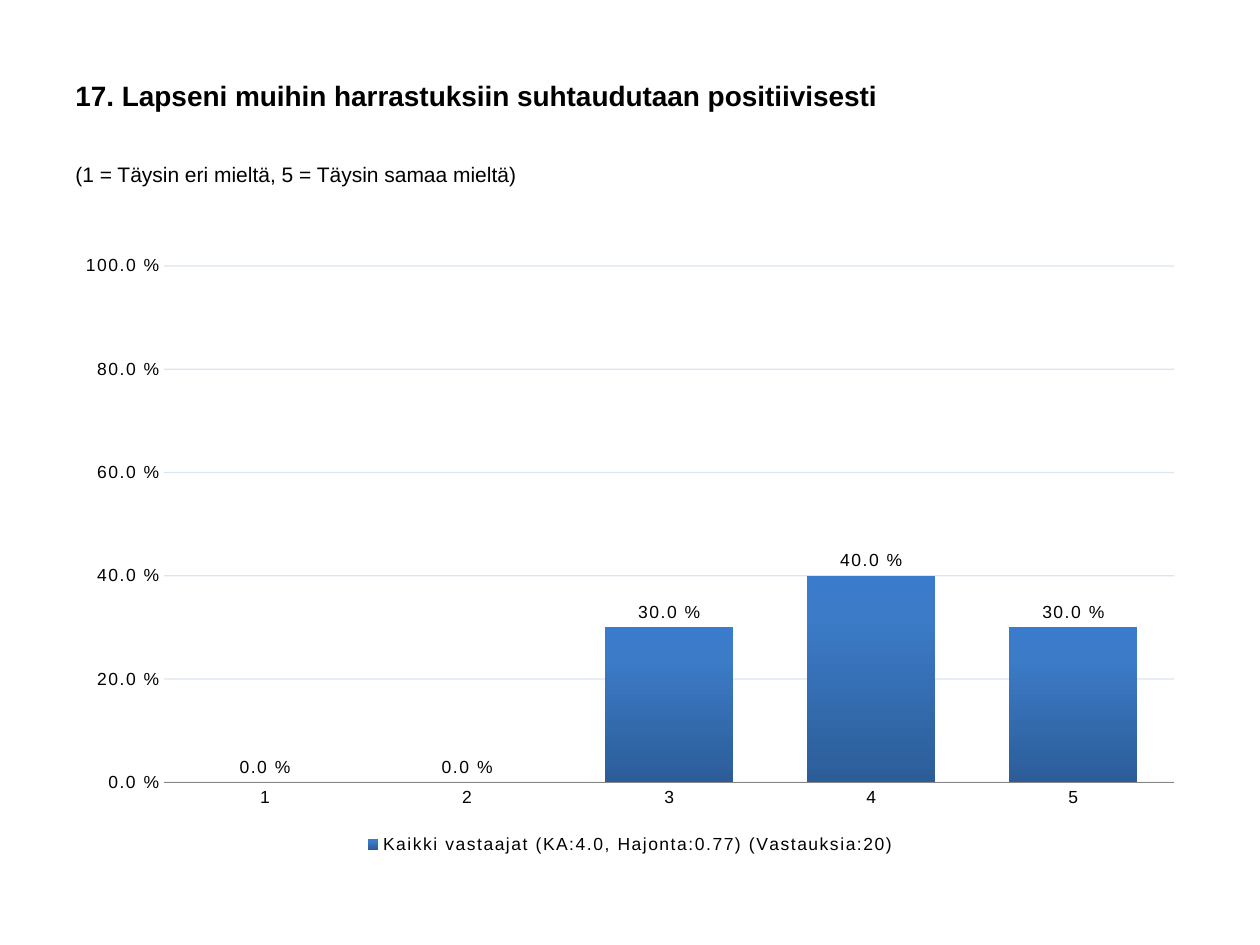
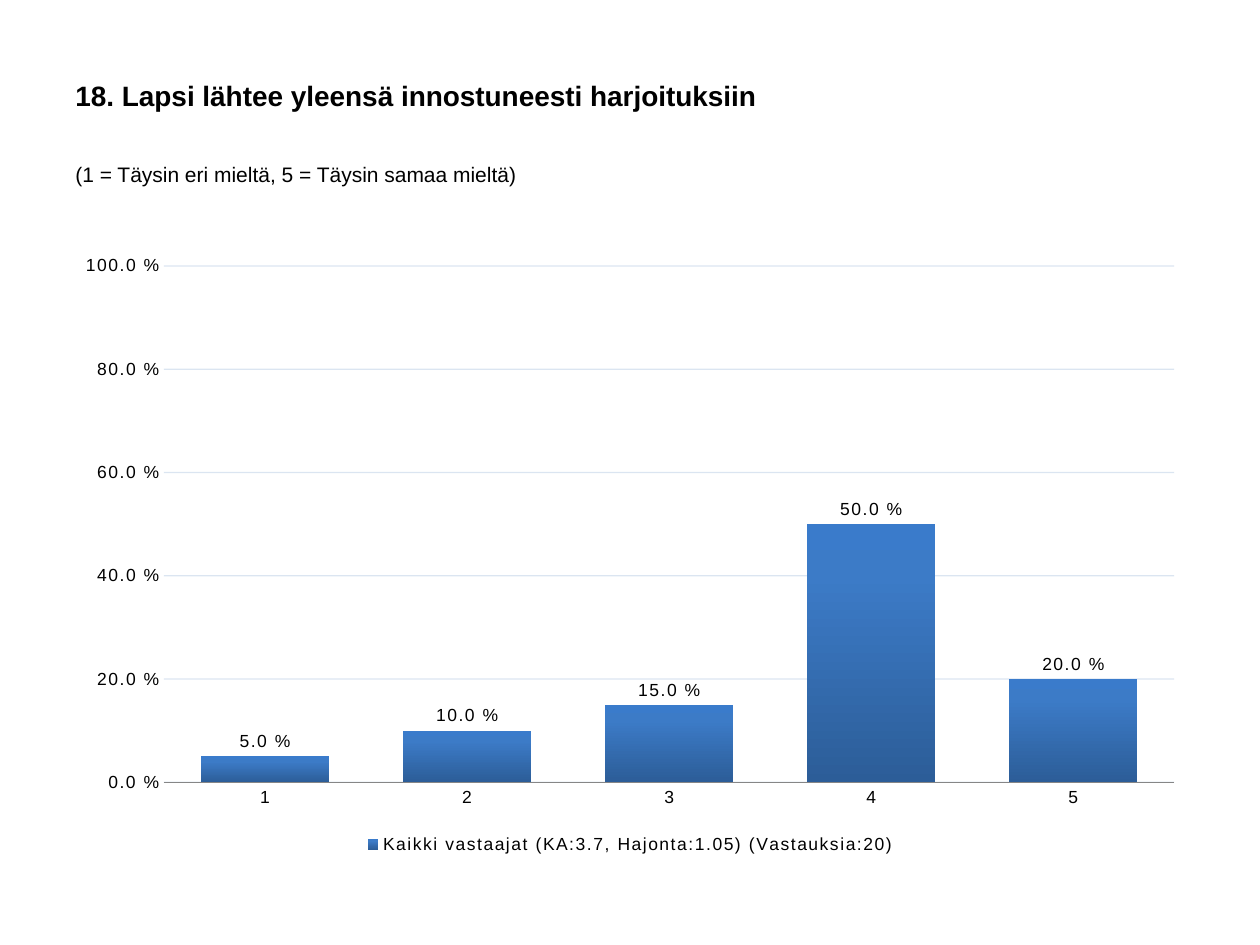
from lxml import etree
from pptx import Presentation
from pptx.chart.data import CategoryChartData
from pptx.dml.color import RGBColor
from pptx.enum.chart import XL_CHART_TYPE, XL_LABEL_POSITION, XL_LEGEND_POSITION, XL_TICK_MARK
from pptx.enum.text import MSO_ANCHOR
from pptx.oxml import parse_xml
from pptx.oxml.ns import nsdecls, qn
from pptx.util import Inches, Pt

COLUMN = XL_CHART_TYPE.COLUMN_CLUSTERED
OUTSIDE = XL_LABEL_POSITION.OUTSIDE_END
BOTTOM = XL_LEGEND_POSITION.BOTTOM
NO_TICK = XL_TICK_MARK.NONE
MIDDLE, TOP = MSO_ANCHOR.MIDDLE, MSO_ANCHOR.TOP

WIDE, HIGH = 10, 7.5
LEFT, SPAN = 0.5, 9
TITLE_BOX = (LEFT, 0.36, SPAN, 0.79)
SCALE_BOX = (LEFT, 1.23, SPAN, 0.59)
CHART_BOX = (LEFT, 1.94, SPAN, 4.88)
PLOT = {"x": 0.089, "y": 0.035, "w": 0.891, "h": 0.84}  # shares of the chart

FACE, INK, GRID, AXIS = "Arial", "000000", "4F81BD", "868686"
BAR_STOPS = ((0, "2C5D98"), (80, "3C7BC7"), (100, "3A7BCB"))
PERCENT = r"0.0\ %"
SCALE = "(1 = Täysin eri mieltä, 5 = Täysin samaa mieltä)"
GRADES = ("1", "2", "3", "4", "5")
ITEMS = (
    ("17. Lapseni muihin harrastuksiin suhtaudutaan positiivisesti",
     "Kaikki vastaajat (KA:4.0, Hajonta:0.77) (Vastauksia:20)",
     (0, 0, 0.3, 0.4, 0.3)),
    ("18. Lapsi lähtee yleensä innostuneesti harjoituksiin",
     "Kaikki vastaajat (KA:3.7, Hajonta:1.05) (Vastauksia:20)",
     (0.05, 0.1, 0.15, 0.5, 0.2)),
)


def color(code):
    return RGBColor.from_string(code)


def inches(box):
    return [Inches(n) for n in box]


def assign(target, values):
    for name, value in values.items():
        setattr(target, name, value)


def style(font, size, bold=False):
    assign(font, {"name": FACE, "size": Pt(size), "bold": bold})
    font.color.rgb = color(INK)


def add_text(slide, box, text, size, bold=False, anchor=TOP, before=0):
    frame = slide.shapes.add_textbox(*inches(box)).text_frame
    assign(frame, {"word_wrap": True, "vertical_anchor": anchor})
    para = frame.paragraphs[0]
    para.space_before = Pt(before)
    run = para.add_run()
    run.text = text
    style(run.font, size, bold)


def shade(series):
    """Fill the bars with a gradient that runs from the bottom up."""
    stops = "".join(f'<a:gs pos="{at * 1000}"><a:srgbClr val="{code}"/></a:gs>'
                    for at, code in BAR_STOPS)
    series.format.fill.background()
    props = series.format.fill._xPr
    props.replace(props.find(qn("a:noFill")), parse_xml(
        f'<a:gradFill {nsdecls("a")} rotWithShape="1"><a:gsLst>{stops}</a:gsLst>'
        '<a:lin ang="16200000" scaled="0"/></a:gradFill>'))


def place_plot(area):
    old = area.find(qn("c:layout"))
    if old is not None:
        area.remove(old)
    sizes = "".join(f'<c:{key} val="{share}"/>' for key, share in PLOT.items())
    area.insert(0, parse_xml(
        f'<c:layout {nsdecls("c")}><c:manualLayout><c:layoutTarget val="inner"/>'
        f'<c:xMode val="edge"/><c:yMode val="edge"/>{sizes}'
        '</c:manualLayout></c:layout>'))


def set_axes(chart):
    for axis in (chart.category_axis, chart.value_axis):
        assign(axis, {"major_tick_mark": NO_TICK, "minor_tick_mark": NO_TICK})
        style(axis.tick_labels.font, 10)
    chart.category_axis.format.line.color.rgb = color(AXIS)
    axis = chart.value_axis
    assign(axis, {"minimum_scale": 0, "maximum_scale": 1, "major_unit": 0.2,
                  "has_major_gridlines": True})
    assign(axis.tick_labels, {"number_format": PERCENT,
                              "number_format_is_linked": False})
    axis.format.line.fill.background()
    line = axis.major_gridlines.format.line
    line.width = Pt(0.75)
    line.color.rgb = color(GRID)
    tint = axis.major_gridlines._xAx.find(
        f'{qn("c:majorGridlines")}//{qn("a:srgbClr")}')
    etree.SubElement(tint, qn("a:alpha")).set("val", "20000")


def add_bars(slide, box, name, shares):
    data = CategoryChartData(number_format=PERCENT)
    data.categories = GRADES
    data.add_series(name, shares)
    chart = slide.shapes.add_chart(COLUMN, *inches(box), data).chart
    style(chart.font, 10)
    assign(chart, {"has_title": False, "has_legend": True})
    assign(chart.legend, {"position": BOTTOM, "include_in_layout": False})
    style(chart.legend.font, 10)
    plot = chart.plots[0]
    assign(plot, {"gap_width": 58, "vary_by_categories": False,
                  "has_data_labels": True})
    assign(plot.data_labels, {"show_value": True, "position": OUTSIDE,
                              "number_format": PERCENT,
                              "number_format_is_linked": False})
    style(plot.data_labels.font, 10)
    shade(plot.series[0])
    set_axes(chart)
    root = chart._chartSpace
    place_plot(root.find(f'.//{qn("c:plotArea")}'))
    for props in root.iter(qn("a:defRPr")):
        props.set("spc", "100")


def add_item(deck, title, name, shares):
    slide = deck.slides.add_slide(deck.slide_layouts[6])
    add_text(slide, TITLE_BOX, title, 16, bold=True, anchor=MIDDLE)
    add_text(slide, SCALE_BOX, SCALE, 12, before=2.4)
    add_bars(slide, CHART_BOX, name, shares)


def main():
    deck = Presentation()
    assign(deck, {"slide_width": Inches(WIDE), "slide_height": Inches(HIGH)})
    for item in ITEMS:
        add_item(deck, *item)
    deck.save("out.pptx")


if __name__ == "__main__":
    main()
